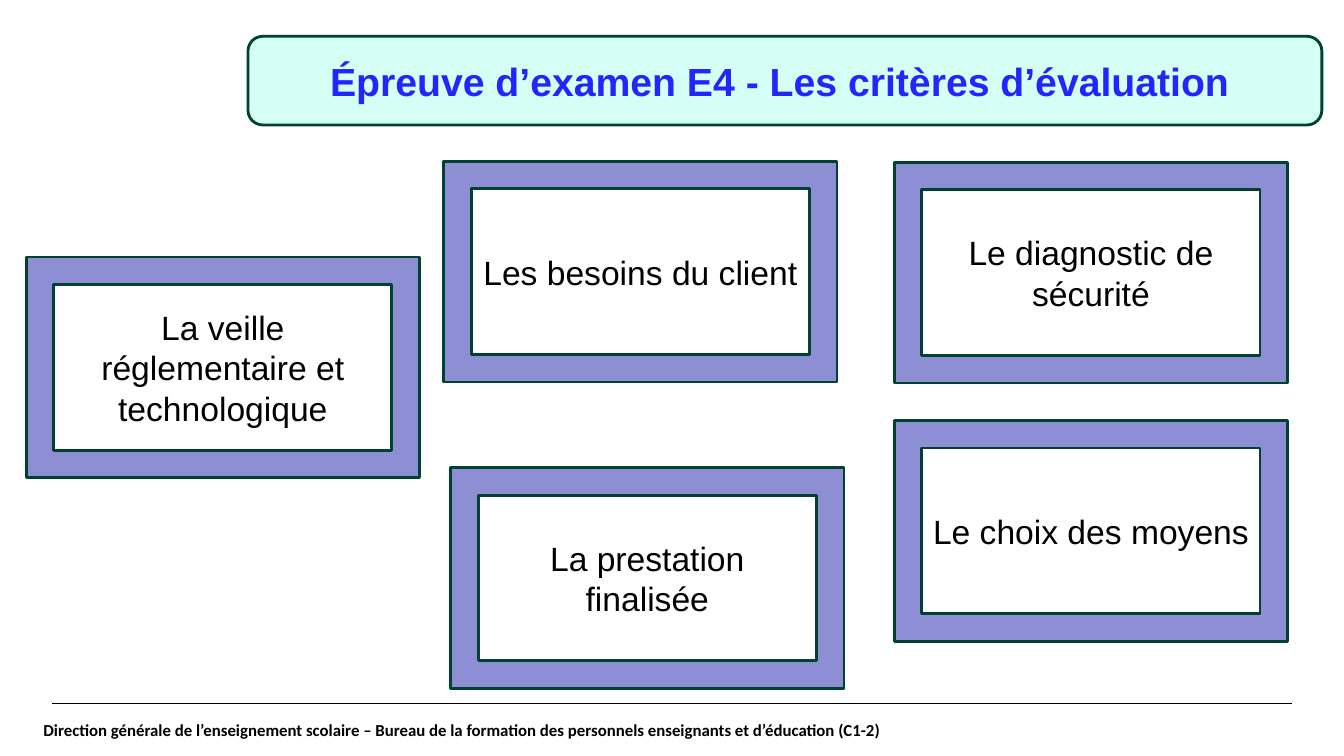
from pptx import Presentation
from pptx import util as u
from pptx.dml.color import RGBColor
from pptx.enum import shapes, text
from pptx.oxml.ns import qn
from lxml import etree

SLIDE_W, SLIDE_H = u.Inches(13.33), u.Inches(7.5)
BLACK, GREEN, MINT, LILAC, BLUE = "000000", "004130", "D5FFF4", "8E8ED5", "2424FF"

TITLE_FONT = {"name": "Arial", "size": u.Pt(28), "bold": True}
CRITERION_FONT = {"name": "Arial", "size": u.Pt(24), "bold": False}
FOOTER_FONT = {"name": "Calibri", "size": u.Pt(12), "bold": True}

# Frame size and positions, in percent of the slide's width and height
FRAME_W, FRAME_H = 29.26, 29.2
RIGHT_COLUMN = 66.54
CRITERIA = [
    ("La veille réglementaire et technologique", 1.95, 34),
    ("Les besoins du client ", 33.01, 21.33),
    ("Le diagnostic de sécurité", RIGHT_COLUMN, 21.47),
    ("Le choix des moyens", RIGHT_COLUMN, 55.6),
    ("La prestation finalisée", 33.53, 61.87),
]


def color(hex_value):
    return RGBColor.from_string(hex_value)


def share(x, y):
    """Turn percentages of the slide into a pair of lengths."""
    return int(SLIDE_W * x / 100), int(SLIDE_H * y / 100)


def write(sp, words, font, hex_value, align):
    tf = sp.text_frame
    tf.word_wrap = True
    tf.vertical_anchor = text.MSO_ANCHOR.MIDDLE
    p = tf.paragraphs[0]
    p.alignment = align
    r = p.add_run()
    r.text = words
    for name, value in font.items():
        setattr(r.font, name, value)
    r.font.color.rgb = color(hex_value)


def add_panel(s, kind, x, y, w, h, fill, words, font, font_color):
    sp = s.shapes.add_shape(kind, *share(x, y), *share(w, h))
    sp.shadow.inherit = False
    sp.fill.solid()
    sp.fill.fore_color.rgb = color(fill)
    sp.line.color.rgb = color(GREEN)
    sp.line.width = u.Pt(2)
    write(sp, words, font, font_color, text.PP_ALIGN.CENTER)


def add_rule(s, x1, x2, y):
    line = s.shapes.add_connector(
        shapes.MSO_CONNECTOR.STRAIGHT, *share(x1, y), *share(x2, y))
    line.line.color.rgb = color(BLACK)
    line.line.width = u.Pt(0.8)
    etree.SubElement(line._element.spPr, qn("a:effectLst"))


def add_footer(s, x, y, w, h, words):
    sp = s.shapes.add_textbox(*share(x, y), *share(w, h))
    for side in ("left", "top", "right", "bottom"):
        setattr(sp.text_frame, f"margin_{side}", 0)
    write(sp, words, FOOTER_FONT, BLACK, text.PP_ALIGN.LEFT)


def main():
    prs = Presentation()
    prs.slide_width, prs.slide_height = SLIDE_W, SLIDE_H
    s = prs.slides.add_slide(prs.slide_layouts[6])

    # Footer
    add_rule(s, 3.9, 96.1, 93.07)
    add_footer(s, 3.23, 93.07, 94.07, 6.93,
               "Direction générale de l’enseignement scolaire – Bureau de la "
               "formation des personnels enseignants et d’éducation (C1-2)")

    # Title
    add_panel(s, shapes.MSO_SHAPE.ROUNDED_RECTANGLE, 18.45, 4.8, 79.9, 11.73,
              MINT, "Épreuve d’examen E4 - Les critères d’évaluation ",
              TITLE_FONT, BLUE)

    # Evaluation criteria
    for words, x, y in CRITERIA:
        add_panel(s, shapes.MSO_SHAPE.FRAME, x, y, FRAME_W, FRAME_H,
                  LILAC, words, CRITERION_FONT, BLACK)

    prs.save("out.pptx")


if __name__ == "__main__":
    main()
